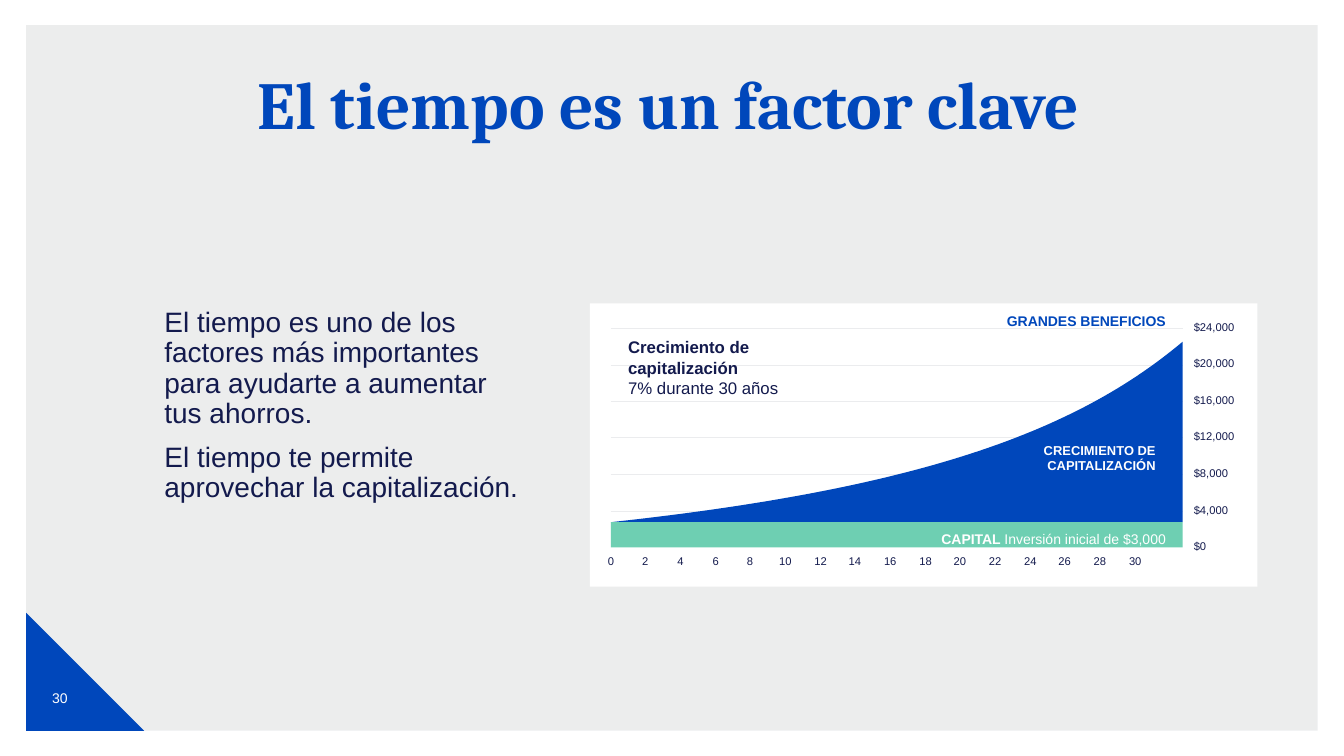
from dataclasses import dataclass
from typing import Any

from lxml import etree
from pptx import Presentation
from pptx.dml.color import RGBColor
from pptx.enum.shapes import MSO_CONNECTOR, MSO_SHAPE
from pptx.enum.text import MSO_ANCHOR, MSO_AUTO_SIZE, PP_ALIGN
from pptx.oxml.ns import qn
from pptx.util import Pt

PX = 9144
LEFT, CENTER, RIGHT = PP_ALIGN.LEFT, PP_ALIGN.CENTER, PP_ALIGN.RIGHT
TOP, MIDDLE = MSO_ANCHOR.TOP, MSO_ANCHOR.MIDDLE
RECTANGLE, TRIANGLE = MSO_SHAPE.RECTANGLE, MSO_SHAPE.RIGHT_TRIANGLE
STRAIGHT = MSO_CONNECTOR.STRAIGHT
NO_AUTOFIT = MSO_AUTO_SIZE.NONE
COLORS = {
    "blue": "0047BB", "navy": "131A4D", "mint": "6ECFB2",
    "gray": "D0D3D4", "grid": "EBECEE", "white": "FFFFFF",
}
PLOT_LEFT, PLOT_RIGHT, GRID_TOP, CAPITAL_TOP = 606, 1173, 326, 518
YEARS = range(0, 31, 2)
YEAR_WIDTH = 30
AMOUNTS = range(24000, -1, -4000)
GROWTH_CURVE = ((606, 518), (910, 485), (1066, 429), (1173, 339))
CURVE_STEPS = 60


@dataclass(frozen=True)
class Box:
    """A rectangle on the slide in px."""
    left: int
    top: int
    width: int
    height: int

    def emu(self) -> tuple[int, ...]:
        """Return the four lengths in EMU."""
        return tuple(v * PX for v in (self.left, self.top, self.width, self.height))


@dataclass(frozen=True)
class Run:
    """A stretch of text with one weight."""
    text: str
    bold: bool = False


@dataclass(frozen=True)
class Label:
    """A text box inside the chart panel."""
    box: Box
    runs: tuple[Run, ...]
    size: float
    color: str
    align: Any = RIGHT


@dataclass(frozen=True)
class Block:
    """A filled preset shape."""
    box: Box
    color: str
    preset: Any = RECTANGLE
    opacity: int = 100


LABELS = [
    Label(Box(1034, 426, 122, 57), (Run("CRECIMIENTO DE CAPITALIZACIÓN", True),), 9.2, "white"),
    Label(Box(822, 522, 344, 25),
          (Run("CAPITAL ", True), Run("Inversión inicial de $3,000")), 10, "white"),
    Label(Box(992, 290, 174, 57), (Run("GRANDES BENEFICIOS", True),), 10, "blue"),
    Label(Box(623, 322, 174, 85),
          (Run("Crecimiento de capitalización", True), Run("\n"), Run("7% durante 30 años")),
          12, "navy", LEFT),
]


def rgb(name: str) -> RGBColor:
    """Look up a colour by its name."""
    return RGBColor.from_string(COLORS[name])


def paint(shape: Any, color: str, opacity: int = 100) -> None:
    """Give a shape a plain fill without line or shadow."""
    shape.shadow.inherit = False
    shape.line.fill.background()
    shape.fill.solid()
    shape.fill.fore_color.rgb = rgb(color)
    if opacity < 100:
        fill_color = shape.element.spPr.find(".//" + qn("a:srgbClr"))
        etree.SubElement(fill_color, qn("a:alpha"), val=str(opacity * 1000))


def add_block(shapes: Any, block: Block) -> None:
    """Draw a filled preset shape."""
    shape = shapes.add_shape(block.preset, *block.box.emu())
    paint(shape, block.color, block.opacity)


def write(shape: Any, paragraphs: list[tuple[Run, ...]], *, size: float, color: str,
          font: str = "Arial", align: Any = LEFT, anchor: Any = MIDDLE,
          insets: tuple[int, int] = (0, 10), line_spacing: float = 1.0,
          gap: int = 0) -> None:
    """Fill a shape with formatted paragraphs of runs."""
    frame = shape.text_frame
    frame.word_wrap = True
    frame.auto_size = NO_AUTOFIT
    frame.vertical_anchor = anchor
    frame.margin_left, frame.margin_right = (inset * PX for inset in insets)
    frame.margin_top = frame.margin_bottom = 5 * PX
    for index, runs in enumerate(paragraphs):
        paragraph = frame.paragraphs[0] if index == 0 else frame.add_paragraph()
        paragraph.alignment = align
        paragraph.line_spacing = line_spacing
        paragraph.space_before = Pt(gap if index else 0)
        properties = paragraph._p.get_or_add_pPr()
        properties.set("marL", "0")
        properties.set("indent", "0")
        etree.SubElement(properties, qn("a:buNone"))
        for part in runs:
            if part.text == "\n":
                paragraph.add_line_break()
                continue
            run = paragraph.add_run()
            run.text = part.text
            run.font.name = font
            run.font.size = Pt(size)
            run.font.bold = part.bold
            run.font.color.rgb = rgb(color)


def add_text(shapes: Any, box: Box, *runs: Run, **text_format: Any) -> None:
    """Add a text box with one paragraph."""
    write(shapes.add_textbox(*box.emu()), [runs], **text_format)


def add_gridline(shapes: Any, top: int) -> None:
    """Draw one horizontal line across the plot."""
    line = shapes.add_connector(STRAIGHT, PLOT_LEFT * PX, top * PX, PLOT_RIGHT * PX, top * PX)
    line.line.color.rgb = rgb("grid")
    line.line.width = Pt(0.5)
    etree.SubElement(line.element.spPr, qn("a:effectLst"))


def curve_point(fraction: float) -> tuple[int, int]:
    """Return a point of the cubic growth curve in EMU."""
    rest = 1 - fraction
    weights = (rest ** 3, 3 * rest ** 2 * fraction, 3 * rest * fraction ** 2, fraction ** 3)
    x, y = (sum(w * p[axis] for w, p in zip(weights, GROWTH_CURVE)) for axis in (0, 1))
    return round(x * PX), round(y * PX)


def add_growth_area(shapes: Any) -> None:
    """Draw the area of compound growth."""
    builder = shapes.build_freeform(*curve_point(0))
    points = [curve_point(step / CURVE_STEPS) for step in range(1, CURVE_STEPS + 1)]
    builder.add_line_segments(points + [(PLOT_RIGHT * PX, CAPITAL_TOP * PX)], close=True)
    paint(builder.convert_to_shape(), "blue")


def add_growth_chart(shapes: Any) -> None:
    """Draw the panel with axes, areas and labels."""
    add_block(shapes, Block(Box(585, 301, 662, 281), "white"))
    for index, amount in enumerate(AMOUNTS):
        offset = index * 145 // 4
        add_text(shapes, Box(1184, 310 + offset, 63, 29), Run(f"${amount:,}"),
                 size=8, color="navy")
        if amount:
            add_gridline(shapes, GRID_TOP + offset)
    for index, year in enumerate(YEARS):
        left = PLOT_LEFT - YEAR_WIDTH // 2 + index * 520 // 15
        add_text(shapes, Box(left, 546, YEAR_WIDTH, 21), Run(str(year)),
                 size=8, color="navy", align=CENTER, insets=(0, 0))
    add_growth_area(shapes)
    add_block(shapes, Block(Box(PLOT_LEFT, CAPITAL_TOP, PLOT_RIGHT - PLOT_LEFT, 25), "mint"))
    for label in LABELS:
        add_text(shapes, label.box, *label.runs, size=label.size, color=label.color,
                 align=label.align)


def place(placeholder: Any, box: Box) -> None:
    """Move a placeholder into its box and to the front."""
    placeholder.left, placeholder.top, placeholder.width, placeholder.height = box.emu()
    placeholder.element.getparent().append(placeholder.element)


def main() -> None:
    """Build the slide and save it."""
    presentation = Presentation()
    presentation.slide_width, presentation.slide_height = 1333 * PX, 750 * PX
    slide = presentation.slides.add_slide(presentation.slide_layouts[1])
    title, body = slide.placeholders
    add_block(slide.shapes, Block(Box(26, 25, 1281, 700), "gray", opacity=40))
    add_block(slide.shapes, Block(Box(26, 608, 117, 117), "blue", TRIANGLE))
    add_text(slide.shapes, Box(32, 663, 55, 58), Run("30"), size=10, color="white",
             align=CENTER, insets=(10, 10))
    add_growth_chart(slide.shapes.add_group_shape().shapes)
    place(title, Box(160, 66, 1006, 176))
    write(title, [(Run("El tiempo es un factor clave", True),)], size=48, color="blue",
          font="Cambria", align=CENTER, anchor=TOP, insets=(0, 0), line_spacing=0.9)
    place(body, Box(163, 301, 363, 331))
    write(body, [
        (Run("El tiempo es uno de los factores más importantes "
             "para ayudarte a aumentar tus ahorros."),),
        (Run("El tiempo te permite aprovechar la capitalización."),),
    ], size=20, color="navy", anchor=TOP, insets=(0, 0), line_spacing=0.9, gap=10)
    presentation.save("out.pptx")


if __name__ == "__main__":
    main()
